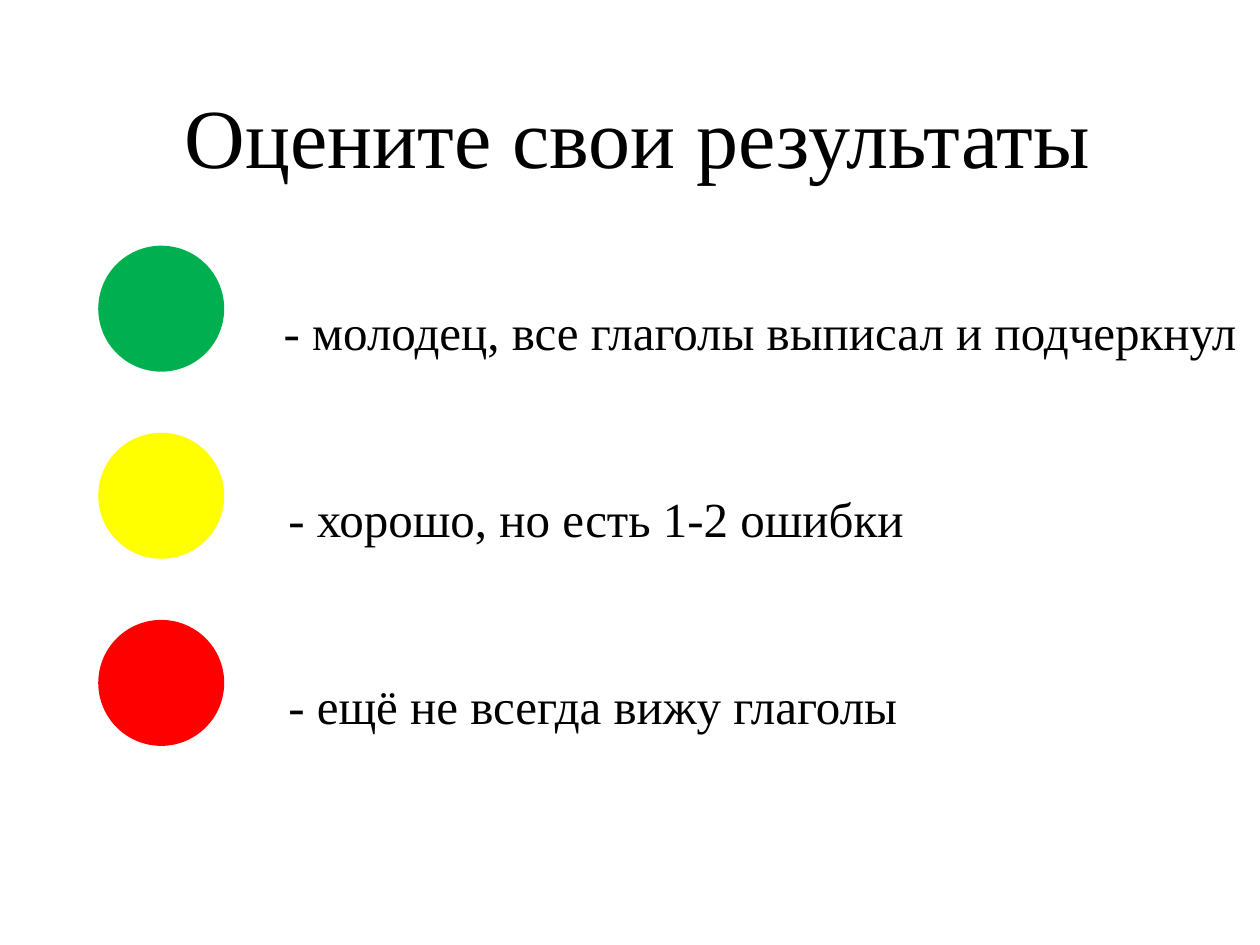
from pptx import Presentation
from pptx.dml.color import RGBColor
from pptx.enum.shapes import MSO_SHAPE
from pptx.enum.text import MSO_AUTO_SIZE, PP_ALIGN
from pptx.util import Inches, Pt

OVAL = MSO_SHAPE.OVAL
GROW = MSO_AUTO_SIZE.SHAPE_TO_FIT_TEXT
LEFT, CENTER = PP_ALIGN.LEFT, PP_ALIGN.CENTER
FONT = "Times New Roman"

# Content: runs are (text, size in points)
TITLE = [("Оцените свои результаты", 48)]
# Circle colour, text left, text width, runs
GRADES = [
    ("00B050", 2.07, 7.93,
     [(" ", 24), ("- молодец, все глаголы выписал и подчеркнул", 28)]),
    ("FFFF00", 2.19, 5.14, [("- хорошо, но есть 1-2 ошибки", 28)]),
    ("FF0000", 2.19, 5.09, [("- ещё не всегда вижу глаголы", 28)]),
]

# Layout in inches
CIRCLE_LEFT, FIRST_TOP, DIAMETER = 0.78, 1.95, 1
ROW_STEP = 1.485
TEXT_DROP, TEXT_HEIGHT = 0.39, 0.57


def color(value):
    return RGBColor.from_string(value)


def add_text(page, left, top, width, height, runs, align=LEFT):
    box = page.shapes.add_textbox(
        Inches(left), Inches(top), Inches(width), Inches(height))
    frame = box.text_frame
    frame.word_wrap = False
    frame.auto_size = GROW
    para = frame.paragraphs[0]
    para.alignment = align
    for text, size in runs:
        span = para.add_run()
        span.text = text
        span.font.name = FONT
        span.font.size = Pt(size)
        span.font.color.rgb = color("000000")


def add_circle(page, top, fill):
    circle = page.shapes.add_shape(
        OVAL, Inches(CIRCLE_LEFT), Inches(top),
        Inches(DIAMETER), Inches(DIAMETER))
    circle.shadow.inherit = False
    circle.fill.solid()
    circle.fill.fore_color.rgb = color(fill)
    circle.line.fill.background()


def main():
    deck = Presentation()
    deck.slide_width, deck.slide_height = Inches(10), Inches(7.5)
    page = deck.slides.add_slide(deck.slide_layouts[6])

    # Title
    add_text(page, 1.33, 0.62, 7.46, 0.91, TITLE, CENTER)

    # One circle and its meaning per row
    for row, (fill, left, width, runs) in enumerate(GRADES):
        top = FIRST_TOP + row * ROW_STEP
        add_text(page, left, top + TEXT_DROP, width, TEXT_HEIGHT, runs)
        add_circle(page, top, fill)

    deck.save("out.pptx")


if __name__ == "__main__":
    main()
